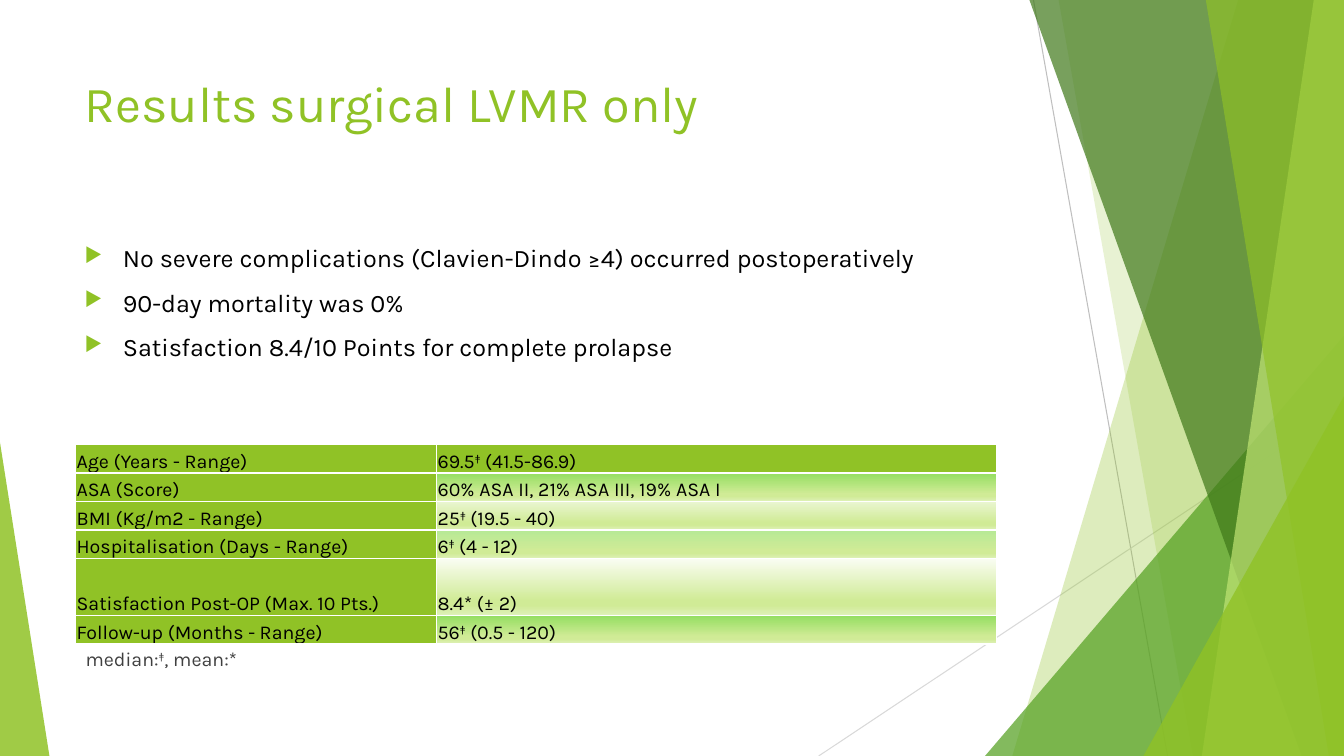
from lxml import etree
from pptx import Presentation
from pptx import util as u
from pptx.dml.color import RGBColor
from pptx.enum import shapes, text
from pptx.oxml import ns

GREEN = RGBColor(0x90, 0xC2, 0x26)
MID_GREEN = RGBColor(0x54, 0xA0, 0x21)
DARK_GREEN = RGBColor(0x3F, 0x78, 0x19)
PALE_GREEN = RGBColor(0xC0, 0xE4, 0x74)
BLACK = RGBColor(0, 0, 0)
GREY = RGBColor(0x40, 0x40, 0x40)
WHITE = RGBColor(0xFF, 0xFF, 0xFF)
LINE_GREY = RGBColor(0xBF, 0xBF, 0xBF)
LINE_LIGHT = RGBColor(0xD9, 0xD9, 0xD9)
FADE_MID = RGBColor(0xD0, 0xEB, 0x96)
FADE_END = RGBColor(0xDF, 0xF1, 0xB9)
FADE_STRONG = RGBColor(0x94, 0xDE, 0x61)
FADE_MEDIUM = RGBColor(0xB7, 0xE9, 0x96)
FADE_LIGHT = RGBColor(0xEA, 0xF6, 0xD1)
FADE_FAINT = RGBColor(0xFA, 0xFD, 0xF3)

FONT = "Karla"
FINDINGS = [
    "No severe complications (Clavien-Dindo ≥4) occurred postoperatively",
    "90-day mortality was 0%",
    "Satisfaction 8.4/10 Points for complete prolapse",
]
MEASURES = [
    ("Age (Years - Range)", "69.5‡ (41.5-86.9)", None),
    ("ASA (Score)", "60% ASA II, 21% ASA III, 19% ASA I", FADE_STRONG),
    ("BMI (Kg/m2 - Range)", "25‡ (19.5 - 40)", FADE_LIGHT),
    ("Hospitalisation (Days - Range)", "6‡ (4 - 12)", FADE_MEDIUM),
    ("Satisfaction Post-OP (Max. 10 Pts.)", "8.4* (± 2)", FADE_FAINT),
    ("Follow-up (Months - Range)", "56‡ (0.5 - 120)", FADE_STRONG),
]


def add(parent, tag, **attributes):
    return etree.SubElement(parent, ns.qn(tag), **attributes)


def apply(target, formats):
    for name, value in formats.items():
        setattr(target, name, value)


def write(paragraph, words, size, color):
    start, dagger, rest = words.partition("‡")
    for part in filter(None, (start, dagger, rest)):
        run = paragraph.add_run()
        apply(run, {"text": part})
        apply(run.font, {"size": u.Pt(size), "name": FONT})
        run.font.color.rgb = color
        if part == "‡":
            run._r.get_or_add_rPr().set("baseline", "30000")


def paint(shape, color, opacity):
    shape.shadow.inherit = False
    shape.fill.solid()
    shape.fill.fore_color.rgb = color
    shape.line.fill.background()
    fill_color = shape._element.spPr.find(".//" + ns.qn("a:srgbClr"))
    add(fill_color, "a:alpha", val=str(opacity * 1000))


def add_backdrop(slide, left, top, width, height):
    def at(x, y):
        return u.Inches(left + x), u.Inches(top + y)

    def ray(start, end, color):
        line = slide.shapes.add_connector(
            shapes.MSO_CONNECTOR.STRAIGHT, *at(*start), *at(*end))
        line.line.color.rgb = color
        line.line.width = u.Pt(0.75)
        add(line._element.spPr, "a:effectLst")

    def band(top_x, bottom_x, color, opacity):
        builder = slide.shapes.build_freeform(*at(top_x, 0))
        corners = [(width, 0), (width, height), (bottom_x, height)]
        builder.add_line_segments([at(*corner) for corner in corners])
        paint(builder.convert_to_shape(), color, opacity)

    def wedge(x, y, wide, apex, color, opacity):
        triangle = slide.shapes.add_shape(
            shapes.MSO_SHAPE.ISOSCELES_TRIANGLE, *at(x, y),
            u.Inches(wide), u.Inches(height - y))
        triangle.adjustments[0] = apex
        paint(triangle, color, opacity)

    ray((10.25, 0), (11.58, height), LINE_GREY)
    ray((width, 4.03), (8.12, height), LINE_LIGHT)
    band(12.28, 10.04, GREEN, 30)
    band(10.5, 11.83, GREEN, 20)
    wedge(9.77, 3.33, 3.56, 1, MID_GREEN, 72)
    band(10.21, 12.91, DARK_GREEN, 70)
    band(13.03, 11.92, PALE_GREEN, 70)
    band(11.96, 13.18, GREEN, 65)
    wedge(11.34, 3.93, 1.99, 1, GREEN, 80)
    wedge(0, 4.39, 0.49, 0, GREEN, 85)


def add_heading(slide, left, top, width, height):
    heading = slide.shapes.title
    apply(heading, {"left": u.Inches(left), "top": u.Inches(top),
                    "width": u.Inches(width), "height": u.Inches(height)})
    apply(heading.text_frame, {"vertical_anchor": text.MSO_ANCHOR.TOP, "word_wrap": True,
                               "auto_size": text.MSO_AUTO_SIZE.NONE})
    paragraph = heading.text_frame.paragraphs[0]
    paragraph.alignment = text.PP_ALIGN.LEFT
    write(paragraph, "Results surgical LVMR only", 36, GREEN)


def add_findings(slide, left, top, width, height):
    frame = slide.shapes.add_textbox(*map(u.Inches, (left, top, width, height))).text_frame
    frame.word_wrap = True
    for number, finding in enumerate(FINDINGS):
        paragraph = frame.add_paragraph() if number else frame.paragraphs[0]
        paragraph.space_before = u.Pt(10)
        properties = paragraph._p.get_or_add_pPr()
        properties.set("marL", str(u.Inches(0.38)))
        properties.set("indent", str(-u.Inches(0.38)))
        add(add(properties, "a:buClr"), "a:srgbClr", val=str(GREEN))
        add(properties, "a:buSzPct", val="80000")
        add(properties, "a:buChar", char="▶")
        write(paragraph, finding, 18, BLACK)


def add_borders(cell):
    properties = cell._tc.get_or_add_tcPr()
    for side in ("a:lnL", "a:lnR", "a:lnT", "a:lnB"):
        border = add(properties, side, w=str(u.Pt(1)))
        add(add(border, "a:solidFill"), "a:srgbClr", val=str(WHITE))


def add_fade(cell, start):
    fade = add(cell._tc.get_or_add_tcPr(), "a:gradFill", rotWithShape="1")
    stops = add(fade, "a:gsLst")
    for place, color in ((0, start), (74, FADE_MID), (83, FADE_MID), (100, FADE_END)):
        stop = add(stops, "a:gs", pos=str(place * 1000))
        add(stop, "a:srgbClr", val=str(color))
    add(fade, "a:lin", ang="5400000", scaled="0")


def add_measures(slide, left, top, width, height):
    table = slide.shapes.add_table(
        len(MEASURES), 2, *map(u.Inches, (left, top, width, height))).table
    apply(table, {"first_row": False, "horz_banding": False})
    label_width = 3.58
    table.columns[0].width = u.Inches(label_width)
    table.columns[1].width = u.Inches(width - label_width)
    unit = height / (len(MEASURES) + 1)
    for row, (label, value, fade) in enumerate(MEASURES):
        table.rows[row].height = u.Inches(unit * (2 if fade == FADE_FAINT else 1))
        for column, words in enumerate((label, value)):
            cell = table.cell(row, column)
            apply(cell, {"margin_left": u.Inches(0.01), "margin_right": u.Inches(0.01),
                         "margin_top": u.Inches(0.01), "margin_bottom": 0,
                         "vertical_anchor": text.MSO_ANCHOR.BOTTOM})
            add_borders(cell)
            if column and fade:
                add_fade(cell, fade)
            else:
                cell.fill.solid()
                cell.fill.fore_color.rgb = GREEN
            write(cell.text_frame.paragraphs[0], words, 14, BLACK)


def add_legend(slide, left, top, width, height):
    frame = slide.shapes.add_textbox(*map(u.Inches, (left, top, width, height))).text_frame
    frame.word_wrap = True
    frame.paragraphs[0].space_before = u.Pt(10)
    write(frame.paragraphs[0], "median:‡, mean:*", 14, GREY)


def main():
    deck = Presentation()
    apply(deck, {"slide_width": u.Inches(13.33), "slide_height": u.Inches(7.5)})
    slide = deck.slides.add_slide(deck.slide_layouts[5])
    add_backdrop(slide, 0, 0, 13.33, 7.5)
    add_heading(slide, 0.74, 0.67, 9.4, 1.44)
    add_findings(slide, 0.74, 2.36, 9.4, 1.5)
    add_measures(slide, 0.75, 4.41, 9.13, 1.98)
    add_legend(slide, 0.75, 6.37, 4.41, 0.48)
    deck.save("out.pptx")


if __name__ == "__main__":
    main()
